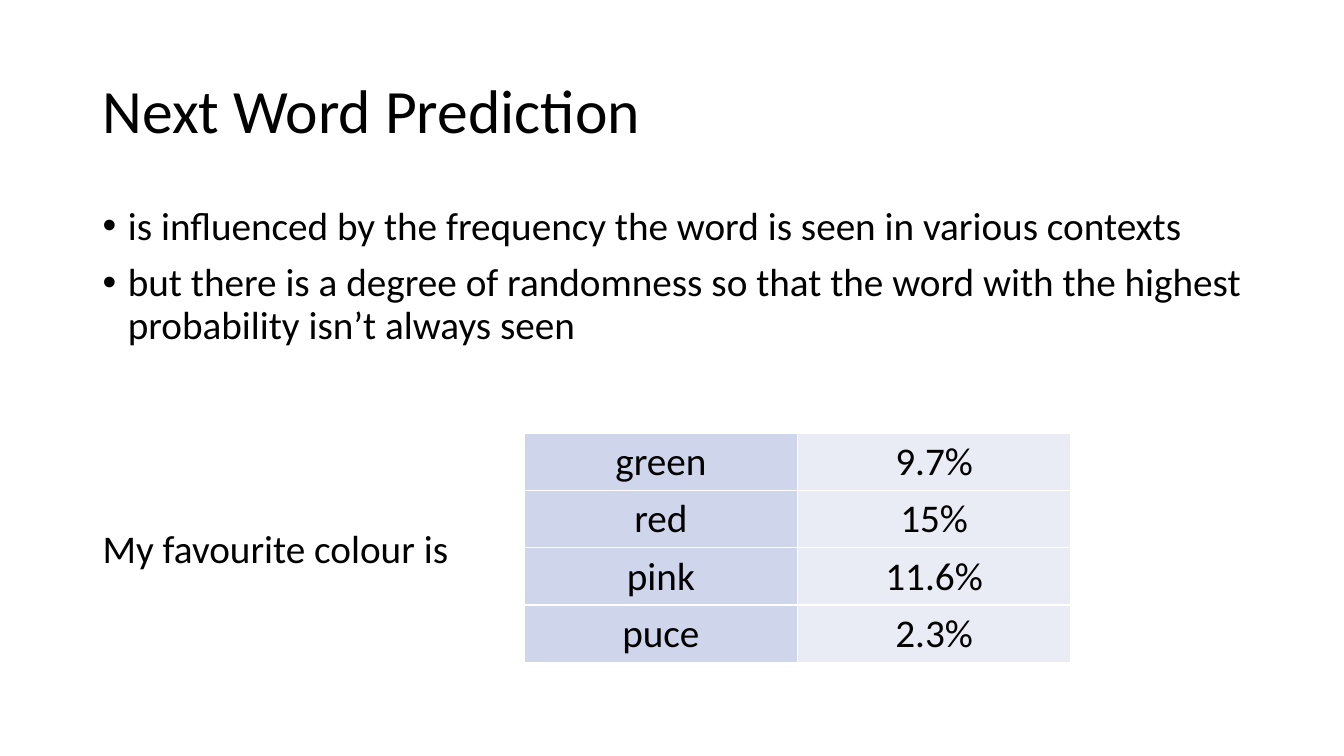
from lxml import etree
from pptx import Presentation
from pptx.dml.color import RGBColor
from pptx.enum.text import MSO_ANCHOR, PP_ALIGN
from pptx.oxml.ns import qn
from pptx.util import Inches, Pt

MIDDLE = MSO_ANCHOR.MIDDLE
CENTER = PP_ALIGN.CENTER


def color(value):
    return RGBColor.from_string(value)


def write(p, text, size):
    p.text = text
    p.font.name = "Calibri"
    p.font.size = Pt(size)
    p.font.color.rgb = color("000000")


prs = Presentation()
prs.slide_width = Inches(13.33)
prs.slide_height = Inches(7.5)
s = prs.slides.add_slide(prs.slide_layouts[6])

title = s.shapes.add_textbox(Inches(0.92), Inches(0.4), Inches(11.5), Inches(1.45))
tf = title.text_frame
tf.word_wrap = True
tf.vertical_anchor = MIDDLE
p = tf.paragraphs[0]
write(p, "Next Word Prediction", 44)
p.line_spacing = 0.9

bullets = [
    "is influenced by the frequency the word is seen in various contexts",
    "but there is a degree of randomness so that the word with the highest probability isn’t always seen",
]
body = s.shapes.add_textbox(Inches(0.92), Inches(2), Inches(11.5), Inches(4.76))
tf = body.text_frame
tf.word_wrap = True
for i, text in enumerate(bullets):
    p = tf.add_paragraph() if i else tf.paragraphs[0]
    write(p, text, 28)
    p.line_spacing = 0.9
    p.space_before = Pt(10)
    pPr = p._p.get_or_add_pPr()
    pPr.set("marL", str(Inches(0.25)))
    pPr.set("indent", str(Inches(-0.25)))
    bullet_font = etree.Element(qn("a:buFont"), typeface="Arial")
    bullet = etree.Element(qn("a:buChar"), char="•")
    pPr.insert_element_before(bullet_font, "a:tabLst", "a:defRPr", "a:extLst")
    pPr.insert_element_before(bullet, "a:tabLst", "a:defRPr", "a:extLst")

prompt = s.shapes.add_textbox(Inches(0.92), Inches(5.15), Inches(4.89), Inches(0.57))
tf = prompt.text_frame
tf.word_wrap = True
write(tf.paragraphs[0], "My favourite colour is", 28)

probabilities = [("green", "9.7%"), ("red", "15%"), ("pink", "11.6%"), ("puce", "2.3%")]
table = s.shapes.add_table(
    len(probabilities), 2, Inches(5.2), Inches(4.3), Inches(5.42), Inches(2.27)
).table
table.first_row = False
table.horz_banding = False
for row, values in enumerate(probabilities):
    for col, (text, fill) in enumerate(zip(values, ("CFD5EA", "E9EBF5"))):
        cell = table.cell(row, col)
        cell.fill.solid()
        cell.fill.fore_color.rgb = color(fill)
        p = cell.text_frame.paragraphs[0]
        write(p, text, 28)
        p.alignment = CENTER

prs.save("out.pptx")
